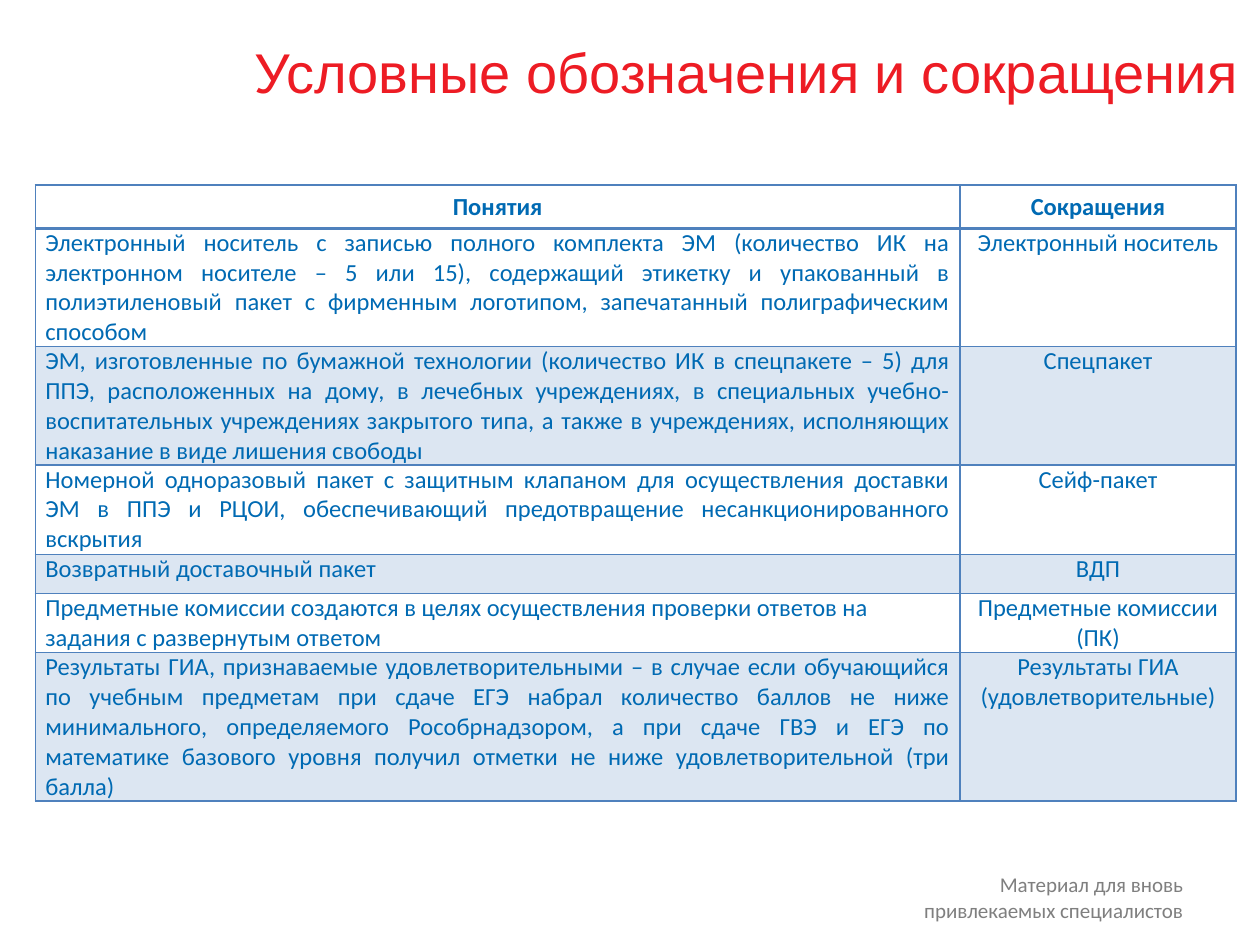
from lxml.etree import SubElement
from pptx import Presentation
from pptx.dml.color import RGBColor
from pptx.enum.text import MSO_ANCHOR, PP_ALIGN
from pptx.oxml.ns import qn
from pptx.util import Inches, Pt

RED, BLUE, GRAY = "ED1C24", "006AB3", "7F7F7F"
LINE, BAND = "4F81BD", "DCE6F2"
LEFT, CENTER, RIGHT, JUSTIFY = (PP_ALIGN.LEFT, PP_ALIGN.CENTER,
                                PP_ALIGN.RIGHT, PP_ALIGN.JUSTIFY)

HEADER = ("Понятия", "Сокращения")
TERMS = [
    ("Электронный носитель с записью полного комплекта ЭМ (количество ИК на "
     "электронном носителе – 5 или 15), содержащий этикетку и упакованный в "
     "полиэтиленовый пакет с фирменным логотипом, запечатанный "
     "полиграфическим способом", "Электронный носитель"),
    ("ЭМ, изготовленные по бумажной технологии (количество ИК в спецпакете – 5) "
     "для ППЭ, расположенных на дому, в лечебных учреждениях, в специальных "
     "учебно-воспитательных учреждениях закрытого типа, а также в учреждениях, "
     "исполняющих наказание в виде лишения свободы", "Спецпакет"),
    ("Номерной одноразовый пакет с защитным клапаном для осуществления доставки "
     "ЭМ в ППЭ и РЦОИ, обеспечивающий предотвращение несанкционированного "
     "вскрытия", "Сейф-пакет"),
    ("Возвратный доставочный пакет", "ВДП"),
    ("Предметные комиссии создаются в целях осуществления проверки ответов на "
     "задания с развернутым ответом", "Предметные комиссии (ПК)"),
    ("Результаты ГИА, признаваемые удовлетворительными – в случае если "
     "обучающийся по учебным предметам при сдаче ЕГЭ набрал количество баллов "
     "не ниже минимального, определяемого Рособрнадзором, а при сдаче ГВЭ и ЕГЭ "
     "по математике базового уровня получил отметки не ниже удовлетворительной "
     "(три балла)", "Результаты ГИА (удовлетворительные)"),
]
COL_WIDTHS = (7.34, 2.19)
ROW_HEIGHTS = (0.34, 0.94, 0.94, 0.71, 0.31, 0.47, 1.18)


def write(tf, text, size, color, align, font="Calibri", bold=False):
    p = tf.paragraphs[0]
    p.alignment = align
    r = p.add_run()
    r.text = text
    r.font.name, r.font.size, r.font.bold = font, Pt(size), bold
    r.font.color.rgb = RGBColor.from_string(color)
    return p


def add_border(cell, side, points):
    ln = SubElement(cell._tc.get_or_add_tcPr(), qn(f"a:ln{side}"), w=str(Pt(points)))
    SubElement(SubElement(ln, qn("a:solidFill")), qn("a:srgbClr"), val=LINE)


prs = Presentation()
prs.slide_width, prs.slide_height = Inches(10), Inches(7.5)
s = prs.slides.add_slide(prs.slide_layouts[6])

# Title and footer
for text, box, size, color, align, font, anchor in (
    ("Условные обозначения и сокращения", (1.89, -0.02, 8.07, 1.17),
     32, RED, CENTER, "Arial", MSO_ANCHOR.MIDDLE),
    ("Материал для вновь привлекаемых специалистов", (6.97, 6.87, 2.52, 0.51),
     12, GRAY, RIGHT, "Calibri", MSO_ANCHOR.TOP),
):
    tf = s.shapes.add_textbox(*map(Inches, box)).text_frame
    tf.word_wrap = True
    tf.vertical_anchor = anchor
    write(tf, text, size, color, align, font)

# Table of terms and abbreviations
table = s.shapes.add_table(
    len(ROW_HEIGHTS), len(COL_WIDTHS), Inches(0.28), Inches(1.47),
    Inches(sum(COL_WIDTHS)), Inches(sum(ROW_HEIGHTS))).table
table.first_row = table.horz_banding = False
for column, width in zip(table.columns, COL_WIDTHS):
    column.width = Inches(width)
for row, height in zip(table.rows, ROW_HEIGHTS):
    row.height = Inches(height)

for i, texts in enumerate([HEADER, *TERMS]):
    header = i == 0
    for j, text in enumerate(texts):
        cell = table.cell(i, j)
        cell.margin_left = cell.margin_right = Inches(0.1 if header else 0.08)
        cell.margin_top = cell.margin_bottom = Inches(0.05 if header else 0)
        cell.vertical_anchor = MSO_ANCHOR.MIDDLE if header else MSO_ANCHOR.TOP
        for side in "LRTB":
            thick = (side == "B" and header) or (side == "T" and i == 1)
            add_border(cell, side, 2 if thick else 1)
        if i and i % 2 == 0:
            cell.fill.solid()
            cell.fill.fore_color.rgb = RGBColor.from_string(BAND)
        else:
            cell.fill.background()
        if header or j == 1:
            align = CENTER
        else:
            align = LEFT if i == 5 else JUSTIFY
        p = write(cell.text_frame, text, 14, BLUE, align, bold=header)
        if header:
            p.space_after = Pt(1)

prs.save("out.pptx")
